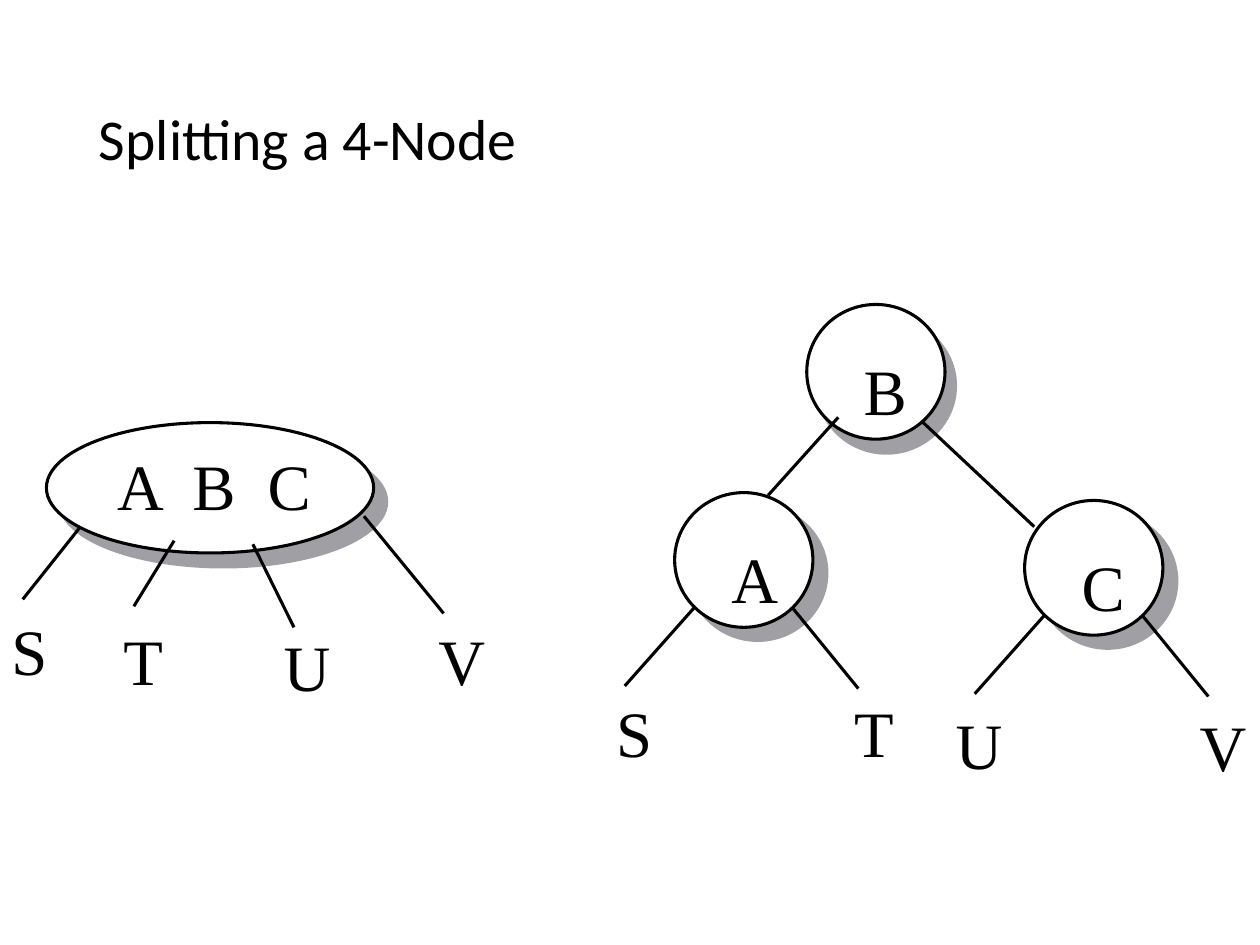
from dataclasses import dataclass
from typing import Any

from lxml import etree
from pptx import Presentation
from pptx import util as u
from pptx.dml import color
from pptx.enum import shapes, text
from pptx.oxml import ns

LABEL_HEIGHT = 33


def rgb(value):
    """Turn a hex string into a colour."""
    return color.RGBColor.from_string(value)


def write(frame, content, size=37, font="Times New Roman", ink="000000", spacing=None, tab=None):
    """Write one formatted paragraph, with evenly spaced tab stops if asked."""
    para = frame.paragraphs[0]
    para.line_spacing = spacing
    span = para.add_run()
    span.text = content
    span.font.size = u.Pt(size)
    span.font.name = font
    span.font.color.rgb = rgb(ink)
    if tab:
        stops = etree.SubElement(para._p.get_or_add_pPr(), ns.qn("a:tabLst"))
        for number in range(1, content.count("\t") + 1):
            etree.SubElement(stops, ns.qn("a:tab"), pos=str(u.Pt(tab * number)), algn="l")


@dataclass
class Sketch:
    """Draw tree diagrams on the current page in one style."""

    page: Any
    ink: str = "000000"
    paper: str = "FFFFFF"
    shade: str = "A0A0A4"
    weight: float = 1.75

    def title(self, content, left, top, width, height):
        """Add the heading, centred vertically in its box."""
        box = self.page.shapes.add_textbox(*map(u.Pt, (left, top, width, height)))
        box.text_frame.word_wrap = True
        box.text_frame.vertical_anchor = text.MSO_ANCHOR.MIDDLE
        write(box.text_frame, content, size=33, font="Calibri", ink=self.ink, spacing=0.9)

    def label(self, content, left, top, width=23, height=LABEL_HEIGHT, tab=None):
        """Add a letter or a row of letters without margins."""
        box = self.page.shapes.add_textbox(*map(u.Pt, (left, top, width, height)))
        frame = box.text_frame
        frame.margin_left = frame.margin_right = frame.margin_top = frame.margin_bottom = 0
        frame.word_wrap = False
        frame.auto_size = text.MSO_AUTO_SIZE.SHAPE_TO_FIT_TEXT
        write(frame, content, ink=self.ink, tab=tab)

    def ellipse(self, left, top, width, height, fill, line):
        """Add a filled and outlined ellipse."""
        shape = self.page.shapes.add_shape(
            shapes.MSO_SHAPE.OVAL, *map(u.Pt, (left, top, width, height)))
        shape.shadow.inherit = False
        shape.fill.solid()
        shape.fill.fore_color.rgb = rgb(fill)
        shape.line.color.rgb = rgb(line)
        shape.line.width = u.Pt(self.weight)

    def node(self, left, top, width=79, height=77, shift=(8, 7.5)):
        """Add a white node over its grey shade."""
        self.ellipse(left + shift[0], top + shift[1], width, height, self.shade, self.shade)
        self.ellipse(left, top, width, height, self.paper, self.ink)

    def edge(self, *ends):
        """Add a straight line between two points."""
        line = self.page.shapes.add_connector(
            shapes.MSO_CONNECTOR.STRAIGHT, *map(u.Pt, ends))
        line.line.color.rgb = rgb(self.ink)
        line.line.width = u.Pt(self.weight)
        etree.SubElement(line._element.spPr, ns.qn("a:effectLst"))

    def circle(self, letter, left, top, shift=(8, 7.5)):
        """Add a round node holding one letter."""
        self.node(left, top, shift=shift)
        self.label(letter, left + 32.5, top + 26.5)

    def parent(self, letter, left, top):
        """Add a round node with two edges leading down to its leaves."""
        self.circle(letter, left, top)
        self.edge(left - 28.5, top + 110.5, left + 11, top + 66)
        self.edge(left + 67.5, top + 66, left + 105, top + 112)


def main():
    """Build the slide and save it."""
    deck = Presentation()
    deck.slide_width, deck.slide_height = u.Pt(720), u.Pt(540)
    sketch = Sketch(deck.slides.add_slide(deck.slide_layouts[6]))
    sketch.title("Splitting a 4-Node", 49.5, 29, 620.5, 104.5)

    sketch.parent("C", 585.5, 286)

    sketch.node(26.5, 241.5, 187, 74.5, shift=(7.5, 8))
    sketch.label("A\tB\tC", 67, 255, 113, 29, tab=43)
    for ends in ((13, 342.5, 46, 301), (208, 295, 253.5, 350.5),
                 (76.5, 346.5, 99.5, 309), (144.5, 311, 168, 358.5)):
        sketch.edge(*ends)

    sketch.parent("A", 385.5, 281.5)
    sketch.circle("B", 461, 174, shift=(6, 8))
    sketch.edge(439, 283, 479, 238.5)
    sketch.edge(526.5, 240.5, 591, 301)

    leaves = (("S", 6.5, 349), ("T", 70.5, 355), ("V", 250.5, 355), ("U", 162, 358),
              ("S", 352, 396), ("T", 488, 396), ("V", 685.5, 404), ("U", 546, 403))
    for letter, left, top in leaves:
        sketch.label(letter, left, top)

    deck.save("out.pptx")


if __name__ == "__main__":
    main()
